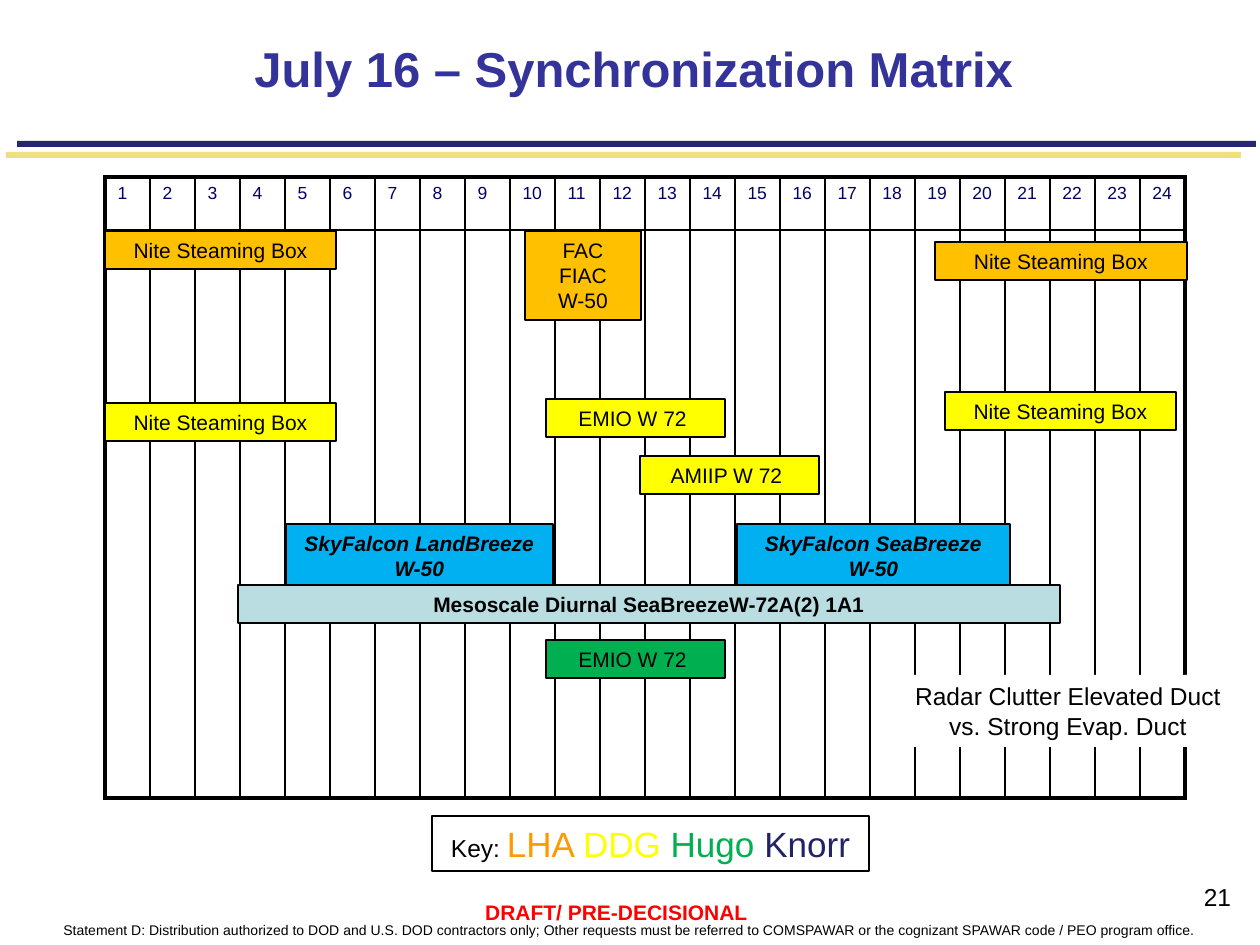
from dataclasses import dataclass

from lxml import etree
from pptx import Presentation
from pptx import util as u
from pptx.dml.color import RGBColor
from pptx.enum import shapes, text
from pptx.oxml.ns import qn

SCALE = 914400 / 126  # EMU in one px


@dataclass(frozen=True)
class Theme:
    font: str = "Arial"
    ink: str = "000000"
    paper: str = "FFFFFF"
    title: str = "333399"
    hour: str = "000066"
    navy: str = "262673"
    sand: str = "EEE07F"
    amber: str = "FFC000"
    yellow: str = "FFFF00"
    green: str = "00B050"
    blue: str = "00B0F0"
    pale: str = "BADDE1"
    orange: str = "FF9900"
    deep: str = "222267"
    red: str = "FF0000"
    tiny: int = 8
    small: int = 10
    body: int = 12
    note: int = 14
    key: int = 20
    head: int = 28


T = Theme()
MID = text.PP_ALIGN.CENTER
LEFT = text.PP_ALIGN.LEFT


def px(n):
    return u.Emu(round(n * SCALE))


def add_run(para, words, size, color, bold=False, slant=False):
    run = para.add_run()
    run.text = words
    font = run.font
    font.name, font.size = T.font, u.Pt(size)
    font.bold, font.italic = bold, slant
    font.color.rgb = RGBColor.from_string(color)


def fill_text(frame, lines, align=MID, wrap=True):
    """Each line is a list of runs: (words, size, color, bold, slant)."""
    frame.word_wrap = wrap
    frame.vertical_anchor = text.MSO_ANCHOR.TOP
    for i, runs in enumerate(lines):
        para = frame.add_paragraph() if i else frame.paragraphs[0]
        para.alignment = align
        for run in runs:
            add_run(para, *run)


def add_label(slide, box, run, align=MID, wrap=True):
    shape = slide.shapes.add_textbox(*map(px, box))
    fill_text(shape.text_frame, [[run]], align, wrap)


def add_box(slide, box, fill, lines=(), edge=1.5, wrap=True):
    shape = slide.shapes.add_shape(shapes.MSO_SHAPE.RECTANGLE, *map(px, box))
    shape.shadow.inherit = False
    shape.fill.solid()
    shape.fill.fore_color.rgb = RGBColor.from_string(fill)
    if edge:
        shape.line.color.rgb = RGBColor.from_string(T.ink)
        shape.line.width = u.Pt(edge)
    else:
        shape.line.fill.background()
    fill_text(shape.text_frame, lines, wrap=wrap)


def add_task(slide, box, fill, *lines, bold=False, slant=False):
    runs = [[(line, T.body, T.ink, bold, slant)] for line in lines]
    add_box(slide, box, fill, runs)


def set_edge(cell, side, width):
    props = cell._tc.get_or_add_tcPr()
    line = etree.SubElement(props, qn("a:" + side), w=str(u.Pt(width)))
    solid = etree.SubElement(line, qn("a:solidFill"))
    etree.SubElement(solid, qn("a:srgbClr"), val=T.ink)


def add_hours(slide, box, heights, count=24):
    grid = slide.shapes.add_table(len(heights), count, *map(px, box)).table
    grid.first_row = grid.horz_banding = False
    for col in grid.columns:
        col.width = px(box[2]) // count
    last = len(heights) - 1
    for r, height in enumerate(heights):
        grid.rows[r].height = px(height)
        for c in range(count):
            cell = grid.cell(r, c)
            # The outer frame is heavy, the inner grid is thin
            outer = {"lnL": c == 0, "lnR": c == count - 1,
                     "lnT": r == 0, "lnB": r == last}
            for side, heavy in outer.items():
                set_edge(cell, side, 2.25 if heavy else 1)
            cell.fill.background()
            if r == 0:
                run = (str(c + 1), T.small, T.hour)
                fill_text(cell.text_frame, [[run]], LEFT)


def main():
    prs = Presentation()
    prs.slide_width, prs.slide_height = px(1260), px(945)
    slide = prs.slides.add_slide(prs.slide_layouts[6])

    # Title and rules
    add_box(slide, (6, 152, 1235, 6), T.sand, edge=0)
    add_box(slide, (17, 141, 1239, 6), T.navy, edge=0)
    add_label(slide, (242, 32, 1018, 68),
              ("July 16 – Synchronization Matrix", T.head, T.title, True), LEFT)

    # Hours of the day
    add_hours(slide, (105, 177, 1081, 621), (53, 568))

    # Night boxes
    for box, fill in (((105, 231, 231, 38), T.amber),
                      ((935, 242, 252, 38), T.amber),
                      ((105, 403, 231, 38), T.yellow),
                      ((945, 392, 231, 38), T.yellow)):
        add_task(slide, box, fill, "Nite Steaming Box")

    # Day tasks
    add_task(slide, (546, 640, 179, 38), T.green, "EMIO W 72 ")
    add_task(slide, (546, 399, 179, 38), T.yellow, "EMIO W 72 ")
    add_task(slide, (640, 456, 179, 38), T.yellow, "AMIIP W 72 ")
    add_task(slide, (525, 231, 116, 89), T.amber, "FAC FIAC", "W-50")

    # Flights, with the wide band over their lower edge
    add_task(slide, (286, 524, 267, 96), T.blue,
             "SkyFalcon LandBreeze", "W-50", bold=True, slant=True)
    add_task(slide, (737, 524, 273, 97), T.blue,
             "SkyFalcon SeaBreeze", "W-50", bold=True, slant=True)
    add_task(slide, (238, 585, 822, 38), T.pale,
             "Mesoscale Diurnal SeaBreezeW-72A(2) 1A1", bold=True)

    # Radar note
    note = "Radar Clutter Elevated Duct vs. Strong Evap. Duct"
    add_box(slide, (902, 675, 332, 72), T.paper,
            [[(note, T.note, T.ink)]], edge=0)

    # Color key
    key = [("Key: ", T.note, T.ink), ("LHA ", T.key, T.orange),
           ("DDG", T.key, T.yellow), (" Hugo ", T.key, T.green),
           ("Knorr", T.key, T.deep)]
    add_box(slide, (432, 816, 437, 55), T.paper, [key], edge=0.75, wrap=False)

    # Footer
    add_label(slide, (0, 915, 1260, 29),
              ("Statement D: Distribution authorized to DOD and U.S. DOD "
               "contractors only; Other requests must be referred to COMSPAWAR "
               "or the cognizant SPAWAR code / PEO program office.",
               T.tiny, T.ink))
    add_label(slide, (1174, 876, 87, 63), ("21", T.note, T.ink))
    add_label(slide, (471, 893, 291, 38),
              ("DRAFT/ PRE-DECISIONAL", T.body, T.red, True), wrap=False)

    prs.save("out.pptx")


if __name__ == "__main__":
    main()
